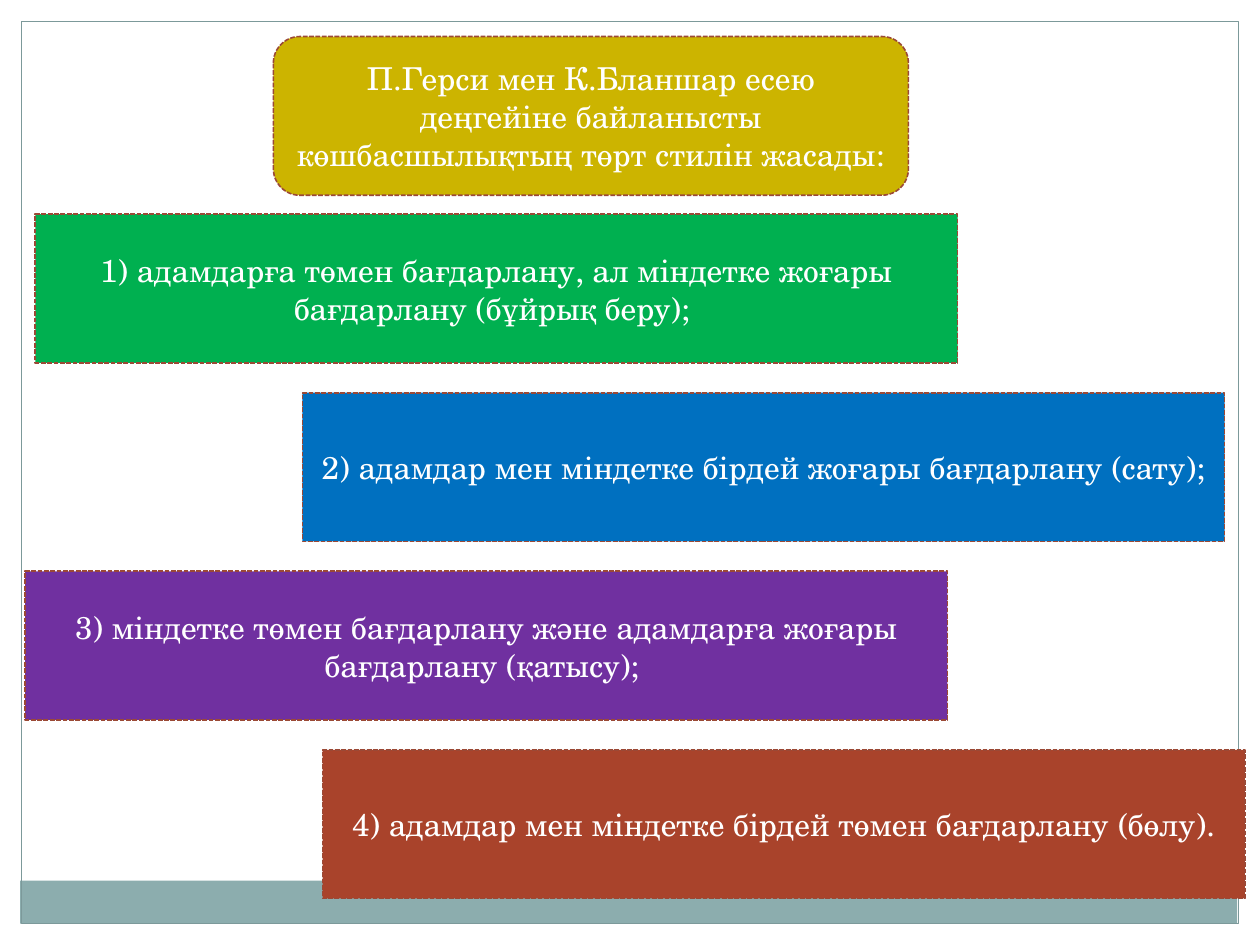
from pptx import Presentation
from pptx.dml.color import RGBColor
from pptx.enum.dml import MSO_LINE
from pptx.enum.shapes import MSO_SHAPE
from pptx.enum.text import MSO_ANCHOR, PP_ALIGN
from pptx.util import Inches, Pt

RECT, ROUNDED = MSO_SHAPE.RECTANGLE, MSO_SHAPE.ROUNDED_RECTANGLE
DASH = MSO_LINE.SQUARE_DOT
MIDDLE, CENTER = MSO_ANCHOR.MIDDLE, PP_ALIGN.CENTER
FONT = "TeX Gyre Schola"

COLORS = {
    "frame": "7C999A", "band": "8CADAE", "outline": "9B4936", "text": "FFFFFF",
    "heading": "CCB400", "telling": "00B050", "selling": "0070C0",
    "participating": "7030A0", "delegating": "A9432B",
}

HEADING = "П.Герси мен К.Бланшар есею деңгейіне байланысты көшбасшылықтың төрт стилін жасады: "
# Leadership styles: colour, left edge, text
STYLES = [
    ("telling", 0.28, "1) адамдарға төмен бағдарлану, ал міндетке жоғары бағдарлану (бұйрық беру); "),
    ("selling", 2.4, "2) адамдар мен міндетке бірдей жоғары бағдарлану (сату);"),
    ("participating", 0.2, "3) міндетке төмен бағдарлану және адамдарға жоғары бағдарлану (қатысу); "),
    ("delegating", 2.56, "4) адамдар мен міндетке бірдей төмен бағдарлану (бөлу)."),
]
STYLE_TOP, STYLE_STEP, STYLE_W, STYLE_H = 1.7, 1.417, 7.32, 1.18


def rgb(name):
    return RGBColor.from_string(COLORS[name])


def add_box(s, kind, box, fill=None, line=None, width=0.75):
    sp = s.shapes.add_shape(kind, *map(Inches, box))
    sp.shadow.inherit = False
    if fill:
        sp.fill.solid()
        sp.fill.fore_color.rgb = rgb(fill)
    else:
        sp.fill.background()
    if line:
        sp.line.color.rgb = rgb(line)
        sp.line.width = Pt(width)
    else:
        sp.line.fill.background()
    return sp


def add_card(s, kind, box, fill, text):
    sp = add_box(s, kind, box, fill, "outline", 0.9)
    sp.line.dash_style = DASH
    tf = sp.text_frame
    tf.word_wrap = True
    tf.vertical_anchor = MIDDLE
    p = tf.paragraphs[0]
    p.text = text
    p.alignment = CENTER
    p.font.name = FONT
    p.font.size = Pt(18)
    p.font.color.rgb = rgb("text")


def main():
    prs = Presentation()
    prs.slide_width, prs.slide_height = Inches(10), Inches(7.5)
    s = prs.slides.add_slide(prs.slide_layouts[6])

    # Bottom band and page frame
    add_box(s, RECT, (0.16, 6.99, 9.66, 0.34), fill="band")
    add_box(s, RECT, (0.17, 0.17, 9.66, 7.16), line="frame")

    # Heading and the four styles
    add_card(s, ROUNDED, (2.17, 0.29, 5.04, 1.26), "heading", HEADING)
    for i, (fill, left, text) in enumerate(STYLES):
        top = STYLE_TOP + i * STYLE_STEP
        add_card(s, RECT, (left, top, STYLE_W, STYLE_H), fill, text)

    prs.save("out.pptx")


if __name__ == "__main__":
    main()
